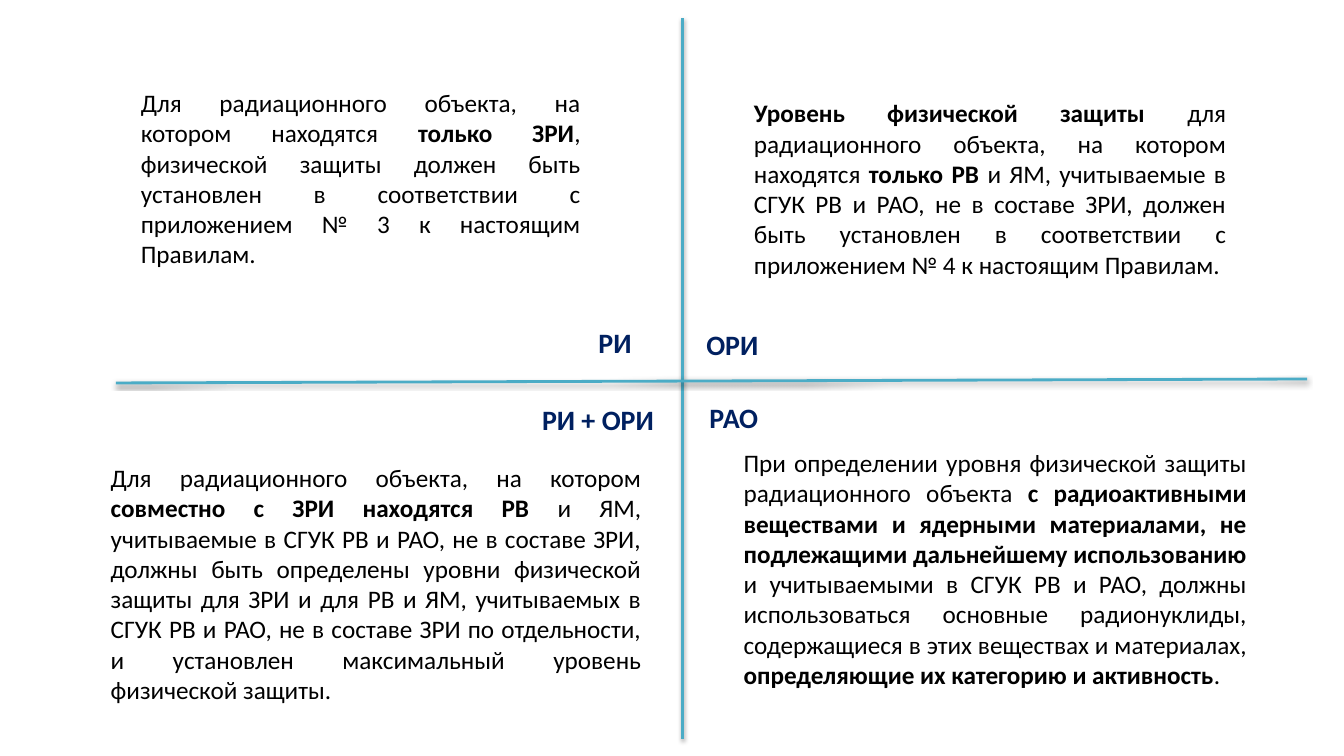
from dataclasses import dataclass

from pptx import Presentation
from pptx.dml.color import RGBColor
from pptx.enum.shapes import MSO_CONNECTOR
from pptx.enum.text import MSO_AUTO_SIZE, PP_ALIGN
from pptx.oxml import parse_xml
from pptx.oxml.ns import nsdecls
from pptx.slide import Slide
from pptx.util import Cm, Pt


@dataclass(frozen=True)
class Theme:
    font: str = "Calibri"
    body_color: RGBColor = RGBColor(0x00, 0x00, 0x00)
    label_color: RGBColor = RGBColor(0x00, 0x20, 0x60)
    axis_color: RGBColor = RGBColor(0x4B, 0xAC, 0xC6)
    body_size: int = 18
    label_size: int = 20
    axis_width: int = 2


@dataclass(frozen=True)
class Box:
    """Left, top, width and height in centimetres."""
    left: float
    top: float
    width: float
    height: float


@dataclass(frozen=True)
class Axis:
    """Start and end of a dividing line in centimetres."""
    x1: float
    y1: float
    x2: float
    y2: float


@dataclass(frozen=True)
class Quadrant:
    """A label and a rule; ** switches bold on and off in the rule."""
    label: str
    label_box: Box
    rule: str
    rule_box: Box


THEME = Theme()

AXES = (
    Axis(17.2, 0.46, 17.2, 18.62),
    Axis(2.92, 9.65, 32.94, 9.55),
)

QUADRANTS = (
    Quadrant(
        "РИ", Box(14.83, 8.08, 1.8, 1.12),
        "Для радиационного объекта, на котором находятся **только ЗРИ**, "
        "физической защиты должен быть установлен в соответствии с "
        "приложением № 3 к настоящим Правилам.",
        Box(3.3, 2.08, 11.58, 4.88),
    ),
    Quadrant(
        "ОРИ", Box(17.55, 8.13, 2.49, 1.12),
        "**Уровень физической защиты **для радиационного объекта, на котором "
        "находятся **только РВ **и ЯМ, учитываемые в СГУК РВ и РАО, не в "
        "составе ЗРИ, должен быть установлен в соответствии с "
        "приложением № 4 к настоящим Правилам.",
        Box(18.75, 2.34, 12.4, 4.88),
    ),
    Quadrant(
        "РИ + ОРИ", Box(13.41, 10.03, 3.33, 1.12),
        "Для радиационного объекта, на котором **совместно с ЗРИ находятся "
        "РВ **и ЯМ, учитываемые в СГУК РВ и РАО, не в составе ЗРИ, должны "
        "быть определены уровни физической защиты для ЗРИ и для РВ и ЯМ, "
        "учитываемых в СГУК РВ и РАО, не в составе ЗРИ по отдельности, и "
        "установлен максимальный уровень физической защиты.",
        Box(2.54, 11.53, 13.87, 6.4),
    ),
    Quadrant(
        "РАО", Box(17.63, 9.98, 2.49, 1.12),
        "При определении уровня физической защиты радиационного объекта "
        "**с радиоактивными веществами и ядерными материалами, не "
        "подлежащими дальнейшему использованию **и учитываемыми в СГУК РВ и "
        "РАО, должны использоваться основные радионуклиды, содержащиеся в "
        "этих веществах и материалах, **определяющие их категорию и "
        "активность**.",
        Box(18.49, 11.15, 13.18, 6.4),
    ),
)


def add_text(slide: Slide, text: str, box: Box, *, size: int, color: RGBColor,
             align: PP_ALIGN = PP_ALIGN.LEFT) -> None:
    """Write one paragraph, with bold between ** marks."""
    frame = slide.shapes.add_textbox(
        Cm(box.left), Cm(box.top), Cm(box.width), Cm(box.height)).text_frame
    frame.word_wrap = True
    frame.auto_size = MSO_AUTO_SIZE.SHAPE_TO_FIT_TEXT
    paragraph = frame.paragraphs[0]
    paragraph.alignment = align
    for index, part in enumerate(text.split("**")):
        if not part:
            continue
        run = paragraph.add_run()
        run.text = part
        run.font.name = THEME.font
        run.font.size = Pt(size)
        run.font.bold = index % 2 == 1
        run.font.color.rgb = color


def add_axis(slide: Slide, axis: Axis) -> None:
    """Draw a dividing line with a soft shadow below it."""
    divider = slide.shapes.add_connector(
        MSO_CONNECTOR.STRAIGHT,
        Cm(axis.x1), Cm(axis.y1), Cm(axis.x2), Cm(axis.y2))
    divider.line.color.rgb = THEME.axis_color
    divider.line.width = Pt(THEME.axis_width)
    divider._element.spPr.append(parse_xml(
        f'<a:effectLst {nsdecls("a")}>'
        f'<a:outerShdw blurRad="{Pt(3.1)}" dist="{Pt(1.6)}" dir="5400000" '
        'rotWithShape="0"><a:srgbClr val="000000"><a:alpha val="38000"/>'
        '</a:srgbClr></a:outerShdw></a:effectLst>'))


def main() -> None:
    deck = Presentation()
    deck.slide_width, deck.slide_height = Cm(33.87), Cm(19.05)
    slide = deck.slides.add_slide(deck.slide_layouts[6])

    # Cross that divides the slide
    for axis in AXES:
        add_axis(slide, axis)

    # Rule and label of each quadrant
    for quadrant in QUADRANTS:
        add_text(slide, quadrant.rule, quadrant.rule_box, size=THEME.body_size,
                 color=THEME.body_color, align=PP_ALIGN.JUSTIFY)
        add_text(slide, f"**{quadrant.label}**", quadrant.label_box,
                 size=THEME.label_size, color=THEME.label_color)

    deck.save("out.pptx")


if __name__ == "__main__":
    main()
